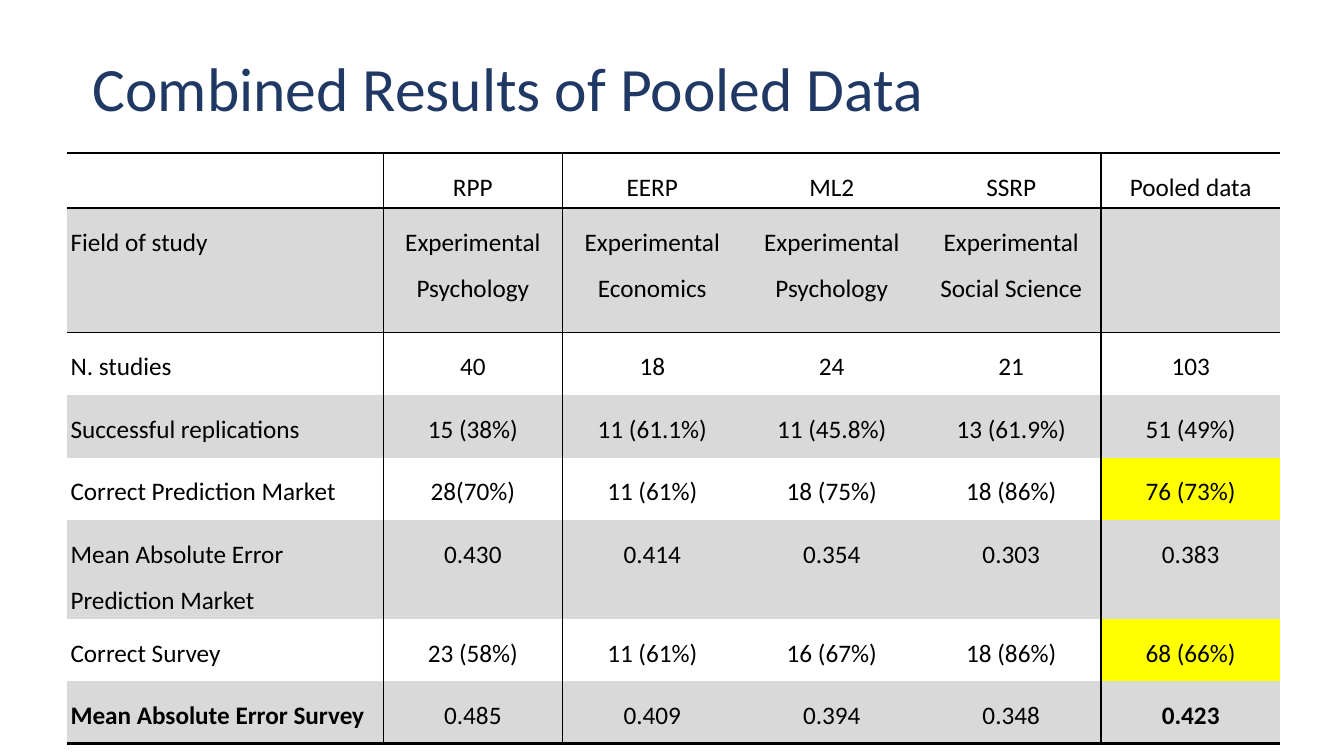
from lxml.etree import SubElement
from pptx import Presentation
from pptx.dml.color import RGBColor
from pptx.enum.text import MSO_ANCHOR, PP_ALIGN
from pptx.oxml.ns import qn
from pptx.util import Inches, Pt

TITLE = "Combined Results of Pooled Data"
ROWS = [
    ("", "RPP", "EERP", "ML2", "SSRP", "Pooled data"),
    ("Field of study", "Experimental Psychology", "Experimental Economics",
     "Experimental Psychology", "Experimental Social Science", ""),
    ("N. studies", "40", "18", "24", "21", "103"),
    ("Successful replications", "15 (38%)", "11 (61.1%)", "11 (45.8%)",
     "13 (61.9%)", "51 (49%)"),
    ("Correct Prediction Market", "28(70%)", "11 (61%)", "18 (75%)",
     "18 (86%)", "76 (73%)"),
    ("Mean Absolute Error Prediction Market", "0.430", "0.414", "0.354",
     "0.303", "0.383"),
    ("Correct Survey", "23 (58%)", "11 (61%)", "16 (67%)", "18 (86%)", "68 (66%)"),
    ("Mean Absolute Error Survey", "0.485", "0.409", "0.394", "0.348", "0.423"),
]
MARKED = {(4, 5), (6, 5)}
BOLD = {(7, 0), (7, 5)}
WIDTHS = [3.14] + [1.78] * 5
HEIGHTS = [0.54, 1.24] + [0.62] * 6
ACROSS = {0: 2, 1: 1.5, 2: 1, len(ROWS): 2}
DOWN = {1: 1, 2: 1, 5: 1}

THEME = {
    "font": "Calibri", "title": 44, "body": 18,
    "navy": "203864", "ink": "000000", "white": "FFFFFF",
    "band": "D9D9D9", "mark": "FFFF00",
}


def color(name):
    return RGBColor.from_string(THEME[name])


def write(para, text, size, tint, bold=False):
    run = para.add_run()
    run.text = text
    font = run.font
    font.name, font.size, font.bold = THEME["font"], Pt(THEME[size]), bold
    font.color.rgb = color(tint)


def border(cell, side, width):
    line = SubElement(cell._tc.get_or_add_tcPr(), qn(f"a:ln{side}"))
    if not width:
        line.set("w", "0")
        SubElement(line, qn("a:noFill"))
        return
    line.set("w", str(Pt(width)))
    fill = SubElement(line, qn("a:solidFill"))
    SubElement(fill, qn("a:srgbClr")).set("val", THEME["ink"])


def style(cell, row, col, text):
    edges = {"L": DOWN.get(col), "R": DOWN.get(col + 1),
             "T": ACROSS.get(row), "B": ACROSS.get(row + 1)}
    for side, width in edges.items():
        border(cell, side, width)
    shade = "mark" if (row, col) in MARKED else "band" if row % 2 else "white"
    cell.fill.solid()
    cell.fill.fore_color.rgb = color(shade)
    cell.margin_left = cell.margin_right = Inches(0.04)
    cell.margin_top = cell.margin_bottom = Inches(0.04)
    para = cell.text_frame.paragraphs[0]
    if text:
        para.line_spacing = 1.5
        para.alignment = PP_ALIGN.CENTER if col else PP_ALIGN.LEFT
        write(para, text, "body", "ink", (row, col) in BOLD)


def add_title(slide):
    box = slide.shapes.add_textbox(
        Inches(0.82), Inches(0.18), Inches(11.5), Inches(1.45))
    frame = box.text_frame
    frame.word_wrap = True
    frame.vertical_anchor = MSO_ANCHOR.MIDDLE
    para = frame.paragraphs[0]
    para.line_spacing = 0.9
    write(para, TITLE, "title", "navy")


def add_grid(slide):
    table = slide.shapes.add_table(
        len(ROWS), len(WIDTHS), Inches(0.66), Inches(1.52),
        Inches(sum(WIDTHS)), Inches(sum(HEIGHTS))).table
    table.first_row = table.horz_banding = False
    for col, width in zip(table.columns, WIDTHS):
        col.width = Inches(width)
    for row, height in zip(table.rows, HEIGHTS):
        row.height = Inches(height)
    for row, texts in enumerate(ROWS):
        for col, text in enumerate(texts):
            style(table.cell(row, col), row, col, text)


def main():
    deck = Presentation()
    deck.slide_width, deck.slide_height = Inches(13.33), Inches(7.5)
    slide = deck.slides.add_slide(deck.slide_layouts[6])
    add_title(slide)
    add_grid(slide)
    deck.save("out.pptx")


if __name__ == "__main__":
    main()
